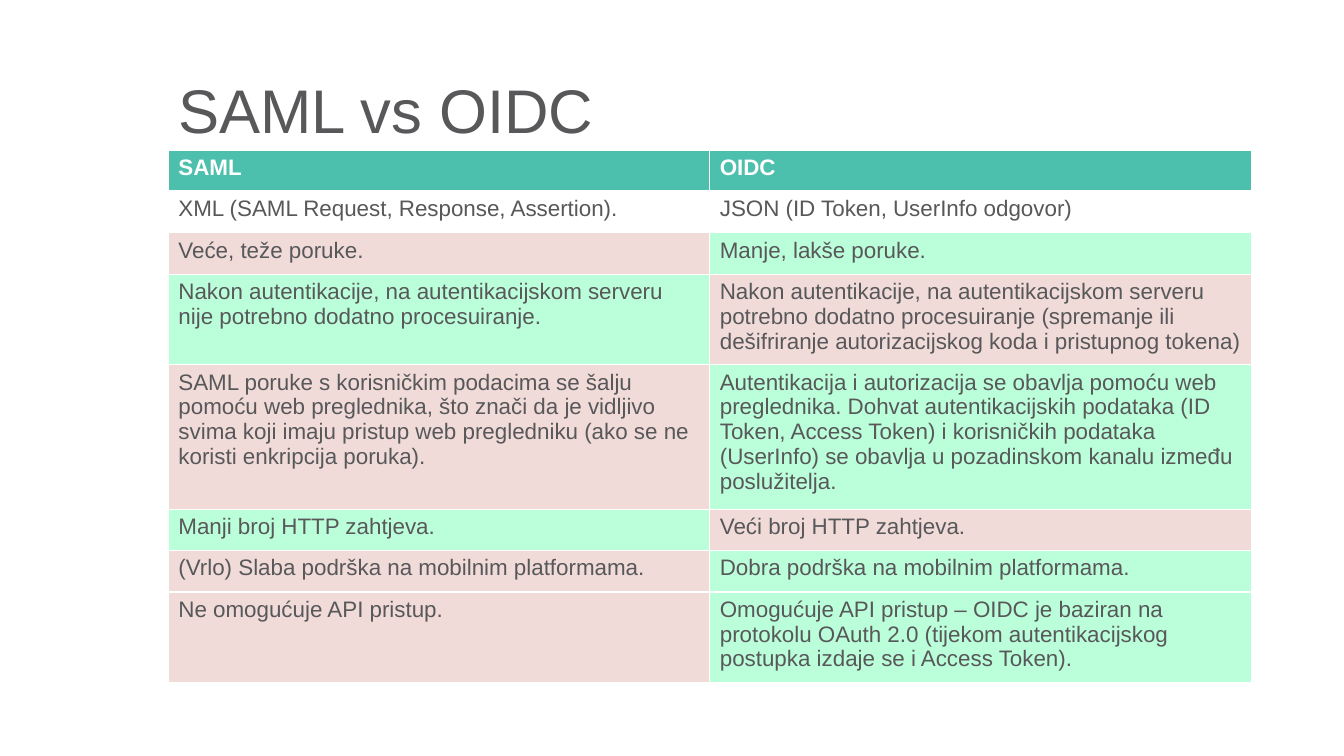
from lxml.etree import SubElement
from pptx import Presentation
from pptx.dml.color import RGBColor
from pptx.enum.text import MSO_ANCHOR
from pptx.oxml.ns import qn
from pptx.util import Inches, Pt

GREY = RGBColor(0x58, 0x58, 0x5A)
WHITE = RGBColor(0xFF, 0xFF, 0xFF)
TEAL = RGBColor(0x4C, 0xC0, 0xAD)
PINK = RGBColor(0xF0, 0xDB, 0xD9)
MINT = RGBColor(0xBB, 0xFF, 0xDA)

# Content: left text, right text, fills of both cells
TITLE = "SAML vs OIDC"
HEADER = (TEAL, TEAL)
NEUTRAL = (None, None)
SAML_BETTER = (MINT, PINK)
OIDC_BETTER = (PINK, MINT)
COMPARISON = [
    ("SAML", "OIDC", HEADER),
    ("XML (SAML Request, Response, Assertion).", "JSON (ID Token, UserInfo odgovor)", NEUTRAL),
    ("Veće, teže poruke.", "Manje, lakše poruke.", OIDC_BETTER),
    ("Nakon autentikacije, na autentikacijskom serveru nije potrebno dodatno procesuiranje.",
     "Nakon autentikacije, na autentikacijskom serveru potrebno dodatno procesuiranje "
     "(spremanje ili dešifriranje autorizacijskog koda i pristupnog tokena)", SAML_BETTER),
    ("SAML poruke s korisničkim podacima se šalju pomoću web preglednika, što znači da je "
     "vidljivo svima koji imaju pristup web pregledniku (ako se ne koristi enkripcija poruka).",
     "Autentikacija i autorizacija se obavlja pomoću web preglednika. Dohvat autentikacijskih "
     "podataka (ID Token, Access Token) i korisničkih podataka (UserInfo) se obavlja u "
     "pozadinskom kanalu između poslužitelja.", OIDC_BETTER),
    ("Manji broj HTTP zahtjeva.", "Veći broj HTTP zahtjeva.", SAML_BETTER),
    ("(Vrlo) Slaba podrška na mobilnim platformama.",
     "Dobra podrška na mobilnim platformama.", OIDC_BETTER),
    ("Ne omogućuje API pristup.",
     "Omogućuje API pristup – OIDC je baziran na protokolu OAuth 2.0 (tijekom "
     "autentikacijskog postupka izdaje se i Access Token).", OIDC_BETTER),
]

# Layout
LEFT, TABLE_TOP = Inches(1.67), Inches(1.49)
COLUMN, ROW = Inches(5.37), Inches(0.41)
TITLE_TOP, TITLE_HEIGHT = Inches(0.4), Inches(1.45)


def write(frame, text, color, **font_format):
    para = frame.paragraphs[0]
    span = para.add_run()
    span.text = text
    for name, value in {"name": "Arial", **font_format}.items():
        setattr(span.font, name, value)
    span.font.color.rgb = color
    return para


def add_borders(cell, bottom):
    properties = cell._tc.get_or_add_tcPr()
    edges = {"a:lnL": 1, "a:lnR": 1, "a:lnT": 1, "a:lnB": bottom}
    for position, (edge, width) in enumerate(edges.items()):
        line = SubElement(properties, qn(edge), w=str(Pt(width)))
        fill = SubElement(line, qn("a:solidFill"))
        SubElement(fill, qn("a:srgbClr"), val=str(WHITE))
        properties.insert(position, line)


deck = Presentation()
deck.slide_width, deck.slide_height = Inches(13.33), Inches(7.5)
page = deck.slides.add_slide(deck.slide_layouts[6])

# Title
box = page.shapes.add_textbox(LEFT, TITLE_TOP, 2 * COLUMN, TITLE_HEIGHT)
box.text_frame.word_wrap = True
box.text_frame.vertical_anchor = MSO_ANCHOR.MIDDLE
write(box.text_frame, TITLE, GREY, size=Pt(44)).line_spacing = 0.9

# Comparison table; rows grow with their text
table = page.shapes.add_table(
    len(COMPARISON), 2, LEFT, TABLE_TOP, 2 * COLUMN, ROW * len(COMPARISON)).table
table.horz_banding = False
for column in table.columns:
    column.width = COLUMN
for row, (saml, oidc, fills) in zip(table.rows, COMPARISON):
    row.height = ROW
    is_header = fills is HEADER
    for cell, text, color in zip(row.cells, (saml, oidc), fills):
        if color is None:
            cell.fill.background()
        else:
            cell.fill.solid()
            cell.fill.fore_color.rgb = color
        add_borders(cell, bottom=3 if is_header else 1)
        write(cell.text_frame, text, WHITE if is_header else GREY,
              size=Pt(16), bold=is_header)

deck.save("out.pptx")
